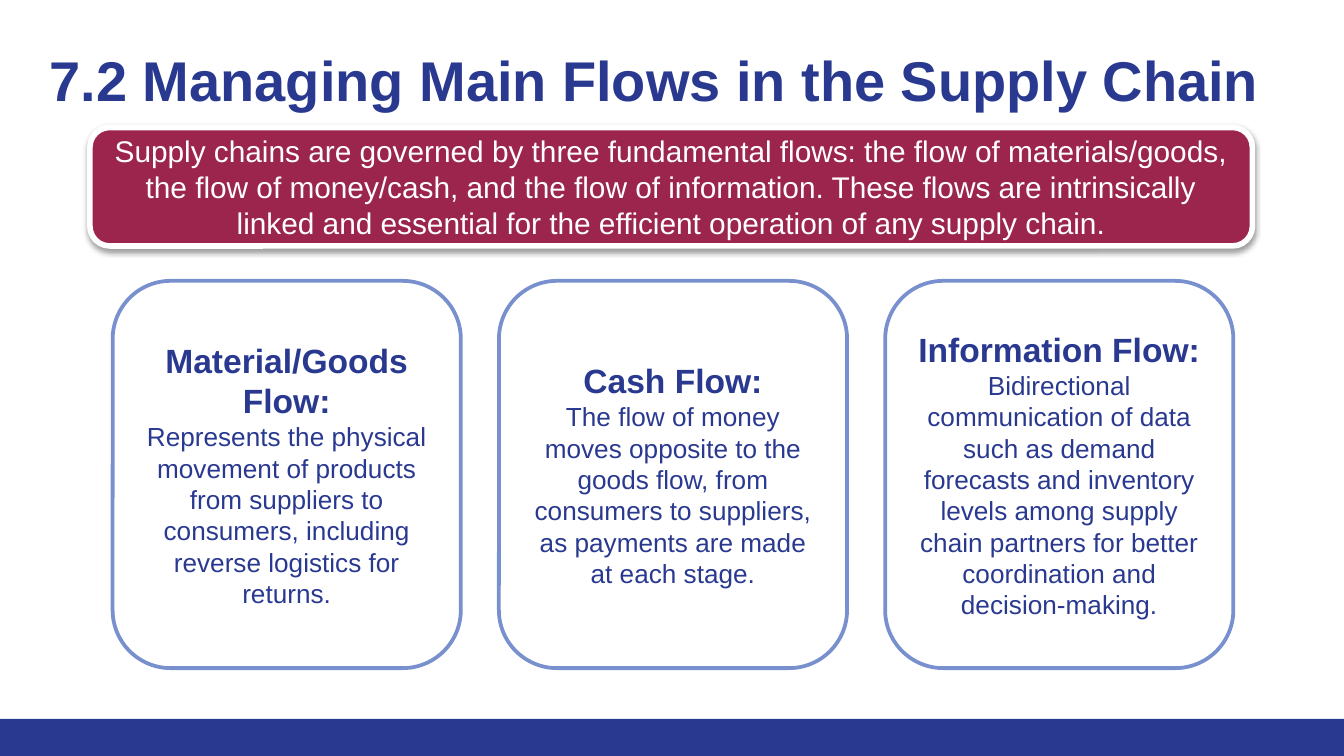
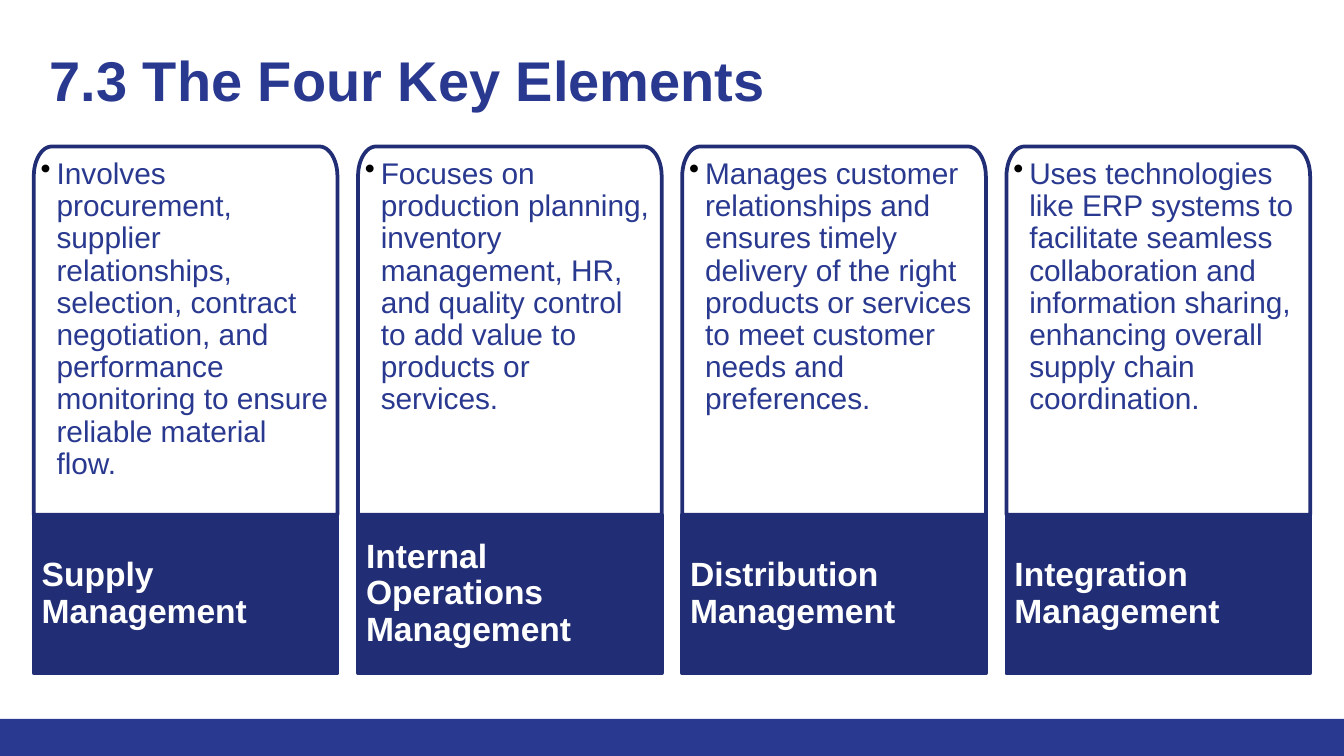
import math

import lxml.etree
import pptx
import pptx.dml.color
import pptx.enum.shapes
import pptx.enum.text
import pptx.oxml.ns
import pptx.util

Cm = pptx.util.Cm
Pt = pptx.util.Pt
SHAPE = pptx.enum.shapes.MSO_SHAPE
ALIGN = pptx.enum.text.PP_ALIGN
ANCHOR = pptx.enum.text.MSO_ANCHOR
qn = pptx.oxml.ns.qn

FONT = "Arial"
SLIDE_WIDTH, SLIDE_HEIGHT = 25.4, 14.29
COLORS = {
    "brand": "2A3990",
    "deep": "212D74",
    "outline": "7890CD",
    "banner": "9C254D",
    "white": "FFFFFF",
    "black": "000000",
}

FLOWS_INTRO = (
    "Supply chains are governed by three fundamental flows: the flow of "
    "materials/goods, the flow of money/cash, and the flow of information. "
    "These flows are intrinsically linked and essential for the efficient "
    "operation of any supply chain."
)
FLOWS = [
    ("Material/Goods Flow:",
     "Represents the physical movement of products from suppliers to consumers, "
     "including reverse logistics for returns."),
    ("Cash Flow:",
     "The flow of money moves opposite to the goods flow, from consumers to "
     "suppliers, as payments are made at each stage."),
    ("Information Flow:",
     "Bidirectional communication of data such as demand forecasts and inventory "
     "levels among supply chain partners for better coordination and decision-making."),
]
ELEMENTS = [
    ("Supply Management",
     "Involves procurement, supplier relationships, selection, contract negotiation, "
     "and performance monitoring to ensure reliable material flow."),
    ("Internal Operations Management",
     "Focuses on production planning, inventory management, HR, and quality control "
     "to add value to products or services."),
    ("Distribution Management",
     "Manages customer relationships and ensures timely delivery of the right "
     "products or services to meet customer needs and preferences."),
    ("Integration Management",
     "Uses technologies like ERP systems to facilitate seamless collaboration and "
     "information sharing, enhancing overall supply chain coordination."),
]


def rgb(name):
    return pptx.dml.color.RGBColor.from_string(COLORS[name])


def add_xml(parent, tag, **attributes):
    return lxml.etree.SubElement(
        parent, qn(tag), {key: str(value) for key, value in attributes.items()})


def paint(shape, fill, line=None, width=2):
    shape.fill.solid()
    shape.fill.fore_color.rgb = rgb(fill)
    if line:
        shape.line.color.rgb = rgb(line)
        shape.line.width = Pt(width)
    else:
        shape.line.fill.background()
    shape.shadow.inherit = False


def set_frame(frame, anchor, insets=(0.25, 0.13, 0.25, 0.13)):
    frame.word_wrap = True
    frame.vertical_anchor = anchor
    (frame.margin_left, frame.margin_top,
     frame.margin_right, frame.margin_bottom) = map(Cm, insets)


def style(paragraph, size, color, bold=False, align=ALIGN.LEFT, spacing=1.0):
    paragraph.alignment = align
    paragraph.line_spacing = spacing
    for run in paragraph.runs:
        run.font.name = FONT
        run.font.size = Pt(size)
        run.font.bold = bold
        run.font.color.rgb = rgb(color)


def add_block(slide, preset, box):
    return slide.shapes.add_shape(preset, *map(Cm, box))


def split_columns(box, count, gap):
    left, top, width, height = box
    column = (width - gap * (count - 1)) / count
    return [(left + i * (column + gap), top, column, height) for i in range(count)]


def add_base(deck, title):
    slide = deck.slides.add_slide(deck.slide_layouts[6])
    band_height = 0.7
    band = add_block(slide, SHAPE.RECTANGLE,
                     (0, SLIDE_HEIGHT - band_height, SLIDE_WIDTH, band_height))
    paint(band, "brand")
    heading = slide.shapes.add_textbox(Cm(0.69), Cm(0.51), Cm(24.08), Cm(2.26))
    set_frame(heading.text_frame, ANCHOR.TOP, (0.25, 0.35, 0.25, 0.25))
    heading.text_frame.text = title
    style(heading.text_frame.paragraphs[0], 30, "brand", bold=True)
    return slide


def add_banner(slide, box, text):
    banner = add_block(slide, SHAPE.ROUNDED_RECTANGLE, box)
    paint(banner, "banner", "white", 3)
    effects = banner._element.spPr.find(qn("a:effectLst"))
    shadow = add_xml(effects, "a:outerShdw", blurRad=Pt(3.1), dist=Pt(1.6),
                     dir=90 * 60000, rotWithShape=0)
    shade = add_xml(shadow, "a:srgbClr", val=COLORS["black"])
    add_xml(shade, "a:alpha", val=38000)
    set_frame(banner.text_frame, ANCHOR.MIDDLE)
    banner.text_frame.text = text
    style(banner.text_frame.paragraphs[0], 16, "white", align=ALIGN.CENTER)


def add_flow_card(slide, box, name, description):
    card = add_block(slide, SHAPE.ROUNDED_RECTANGLE, box)
    paint(card, "white", "outline")
    frame = card.text_frame
    set_frame(frame, ANCHOR.MIDDLE)
    frame.text = f"{name}\n{description}"
    style(frame.paragraphs[0], 18, "brand", bold=True, align=ALIGN.CENTER)
    style(frame.paragraphs[1], 14, "brand", align=ALIGN.CENTER)


def build_arched_panel(slide, box, radius_x=0.34, radius_y=0.56, steps=12):
    left, top, width, height = box
    right, bottom = left + width, top + height
    angles = [math.pi / 2 * i / steps for i in range(steps + 1)]
    arc = [(radius_x * (1 - math.cos(a)), radius_y * (1 - math.sin(a))) for a in angles]
    outline = [(left + x, top + y) for x, y in arc]
    outline += [(right - x, top + y) for x, y in reversed(arc)]
    outline.append((right, bottom))
    builder = slide.shapes.build_freeform(Cm(left), Cm(bottom))
    builder.add_line_segments([(Cm(x), Cm(y)) for x, y in outline], close=True)
    return builder.convert_to_shape()


def add_bullet(paragraph, indent=0.3):
    properties = paragraph._p.get_or_add_pPr()
    properties.set("marL", str(Cm(indent)))
    properties.set("indent", str(-Cm(indent)))
    color = add_xml(properties, "a:buClr")
    add_xml(color, "a:srgbClr", val=COLORS["black"])
    add_xml(properties, "a:buChar", char="•")


def add_element_column(slide, box, name, description):
    left, top, width, height = box
    caption_height = 3
    panel_height = height - caption_height

    panel = build_arched_panel(slide, (left, top, width, panel_height))
    paint(panel, "white", "deep")
    panel_color = panel._element.spPr.find(qn("a:solidFill"))[0]
    add_xml(panel_color, "a:alpha", val=90000)
    set_frame(panel.text_frame, ANCHOR.TOP, (0.13, 0.23, 0.13, 0.05))
    panel.text_frame.text = description
    detail = panel.text_frame.paragraphs[0]
    style(detail, 16, "brand", spacing=0.9)
    add_bullet(detail)

    caption = add_block(slide, SHAPE.RECTANGLE,
                        (left, top + panel_height, width, caption_height))
    paint(caption, "deep", "deep")
    set_frame(caption.text_frame, ANCHOR.MIDDLE, (0.15, 0, 1.6, 0))
    caption.text_frame.text = name
    style(caption.text_frame.paragraphs[0], 18, "white", bold=True, spacing=0.9)


def add_flows_slide(deck):
    slide = add_base(deck, "7.2 Managing Main Flows in the Supply Chain")
    add_banner(slide, (1.7, 2.41, 21.97, 2.24), FLOWS_INTRO)
    cards = split_columns((2.13, 5.31, 21.18, 7.32), len(FLOWS), 0.72)
    for box, flow in zip(cards, FLOWS):
        add_flow_card(slide, box, *flow)


def add_elements_slide(deck):
    slide = add_base(deck, "7.3 The Four Key Elements")
    columns = split_columns((0.64, 2.77, 24.12, 9.96), len(ELEMENTS), 0.39)
    for box, element in zip(columns, ELEMENTS):
        add_element_column(slide, box, *element)


def main():
    deck = pptx.Presentation()
    deck.slide_width = Cm(SLIDE_WIDTH)
    deck.slide_height = Cm(SLIDE_HEIGHT)
    add_flows_slide(deck)
    add_elements_slide(deck)
    deck.save("out.pptx")


if __name__ == "__main__":
    main()
